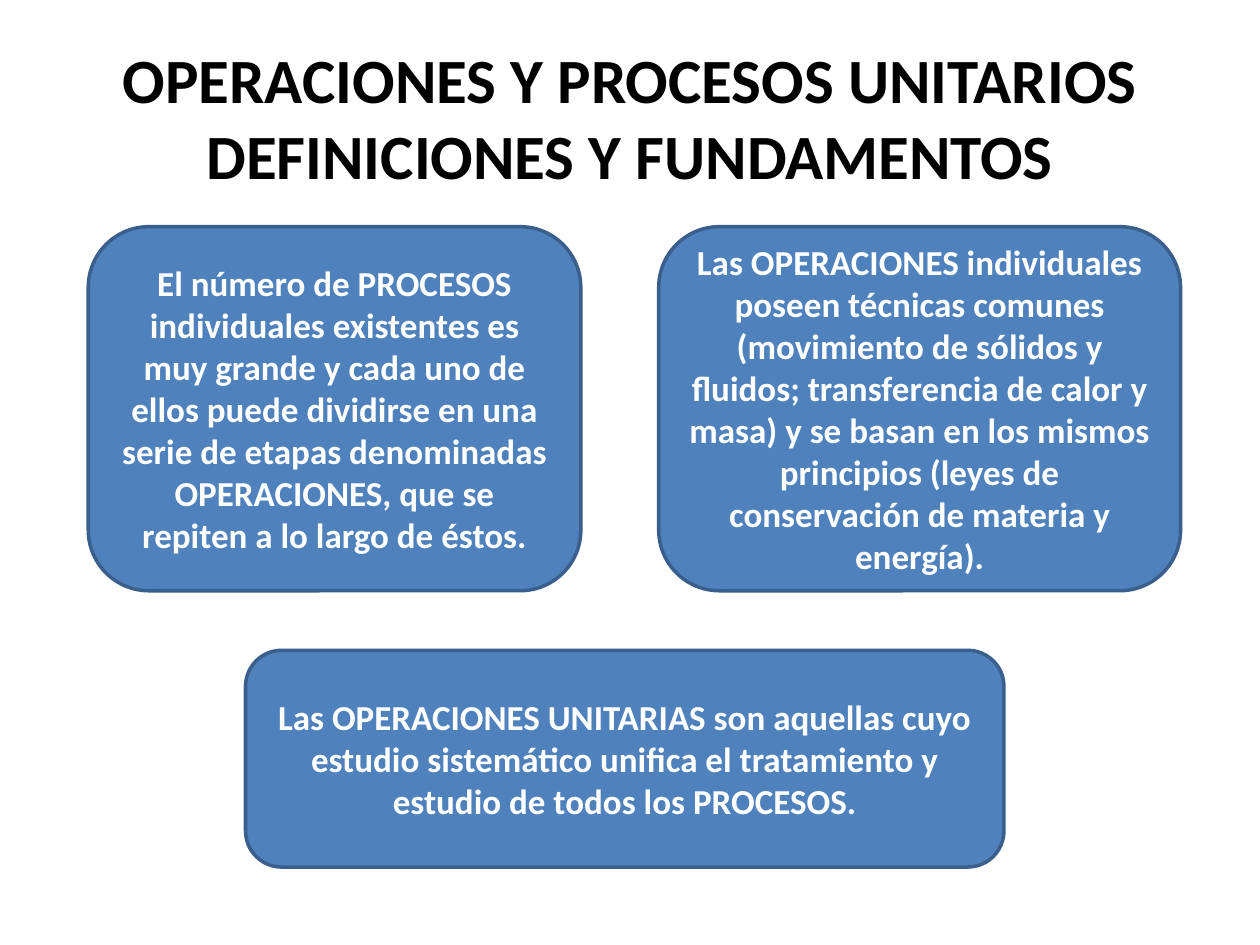
from pptx import Presentation
from pptx.dml.color import RGBColor
from pptx.enum.shapes import MSO_SHAPE
from pptx.enum.text import MSO_ANCHOR, PP_ALIGN
from pptx.util import Cm, Pt

ROUND = MSO_SHAPE.ROUNDED_RECTANGLE
MIDDLE = MSO_ANCHOR.MIDDLE
CENTER = PP_ALIGN.CENTER

BLACK = RGBColor(0x00, 0x00, 0x00)
WHITE = RGBColor(0xFF, 0xFF, 0xFF)
BLUE = RGBColor(0x4F, 0x81, 0xBD)
NAVY = RGBColor(0x3A, 0x5F, 0x8C)

TOP = 4.57
TALL = 7.34

HEADING = ("OPERACIONES Y PROCESOS UNITARIOS", "DEFINICIONES Y FUNDAMENTOS")
CARDS = [
    ("El número de PROCESOS individuales existentes es muy grande y cada uno "
     "de ellos puede dividirse en una serie de etapas denominadas "
     "OPERACIONES, que se repiten a lo largo de éstos.",
     (1.78, TOP, 9.93, TALL)),
    ("Las OPERACIONES individuales poseen técnicas comunes (movimiento de "
     "sólidos y fluidos; transferencia de calor y masa) y se basan en los "
     "mismos principios (leyes de conservación de materia y energía).",
     (13.28, TOP, 10.52, TALL)),
    ("Las OPERACIONES UNITARIAS son aquellas cuyo estudio sistemático unifica "
     "el tratamiento y estudio de todos los PROCESOS.",
     (4.95, 13.11, 15.29, 4.37)),
]


class Deck:
    face = "Calibri"

    def __init__(self):
        self.file = Presentation()
        self.file.slide_width = Cm(25.4)
        self.file.slide_height = Cm(19.05)
        self.slide = self.file.slides.add_slide(self.file.slide_layouts[5])

    def style(self, shape, size, color):
        frame = shape.text_frame
        frame.word_wrap = True
        frame.vertical_anchor = MIDDLE
        for para in frame.paragraphs:
            para.alignment = CENTER
            font = para.font
            font.name = self.face
            font.size = Pt(size)
            font.bold = True
            font.color.rgb = color

    def title(self, lines, left, top, width, height):
        shape = self.slide.shapes.title
        shape.left, shape.top = Cm(left), Cm(top)
        shape.width, shape.height = Cm(width), Cm(height)
        shape.text_frame.text = "\v".join(lines)
        self.style(shape, 36, BLACK)

    def card(self, text, box):
        shape = self.slide.shapes.add_shape(ROUND, *map(Cm, box))
        shape.shadow.inherit = False
        shape.fill.solid()
        shape.fill.fore_color.rgb = BLUE
        shape.line.color.rgb = NAVY
        shape.line.width = Pt(2)
        shape.text_frame.text = text
        self.style(shape, 20, WHITE)


def main():
    deck = Deck()
    deck.title(HEADING, 1.27, 0.76, 22.86, 3.18)
    for text, box in CARDS:
        deck.card(text, box)
    deck.file.save("out.pptx")


if __name__ == "__main__":
    main()
